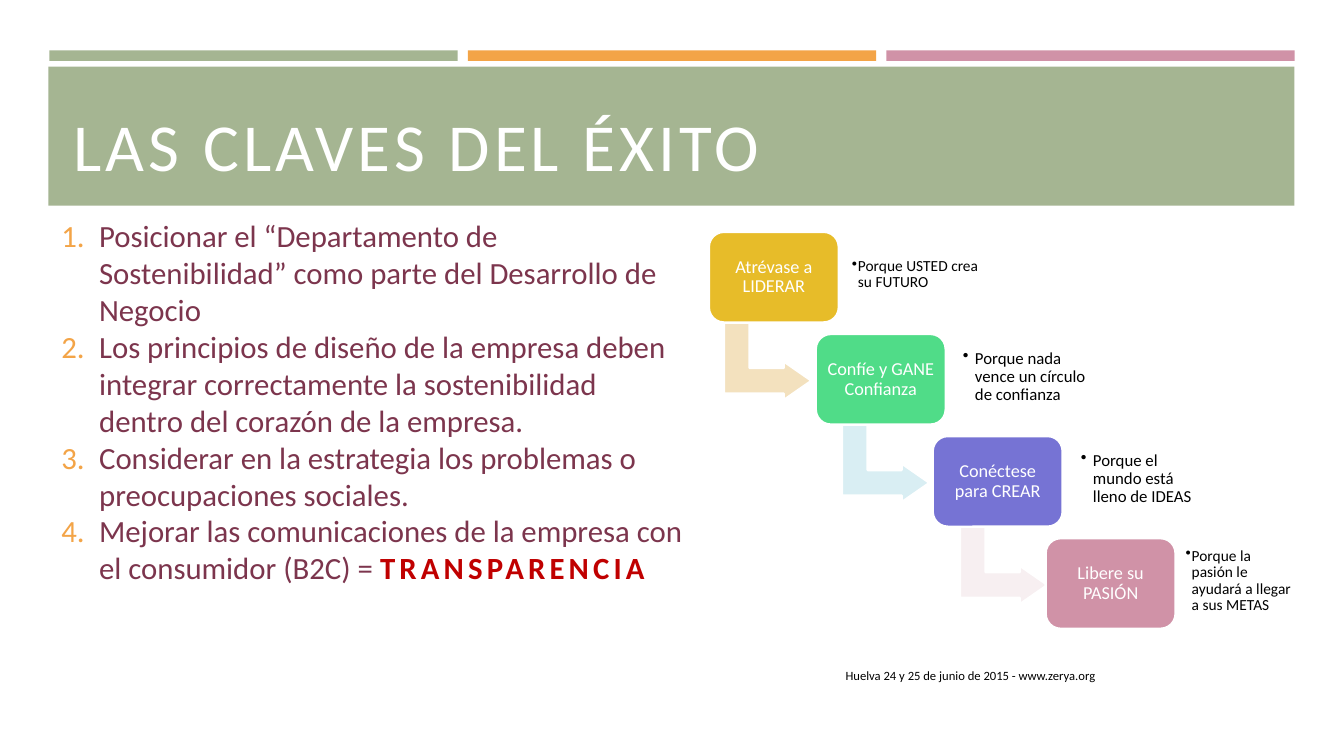
from lxml import etree
from pptx import Presentation, util as u
from pptx.dml.color import RGBColor
from pptx.enum import shapes, text
from pptx.oxml.ns import qn

THEME = {
    "font": "Calibri",
    "sage": "A5B592", "orange": "F3A447", "rose": "D092A7", "white": "FFFFFF",
    "black": "000000", "plum": "7C354D", "red": "C00000",
    "title": 48, "body": 22, "step": 13, "footer": 9,
}
CELL = u.Inches(0.1)  # the slide is a grid of 133.3 columns by 75 rows

presentation = Presentation()
presentation.slide_width, presentation.slide_height = round(133.3 * CELL), 75 * CELL
slide = presentation.slides.add_slide(presentation.slide_layouts[6])


def add_box(column, row, columns, rows, kind=None, fill=None, outlined=False):
    """Add a filled preset shape, or a wrapping text box when no kind is given."""
    frame = [round(cells * CELL) for cells in (column, row, columns, rows)]
    if kind is None:
        shape = slide.shapes.add_textbox(*frame)
    else:
        shape = slide.shapes.add_shape(kind, *frame)
        shape.shadow.inherit = False
        shape.fill.solid()
        shape.fill.fore_color.rgb = RGBColor.from_string(fill)
        if outlined:
            shape.line.color.rgb = RGBColor.from_string(THEME["white"])
            shape.line.width = u.Pt(1.75)
        else:
            shape.line.fill.background()
    shape.text_frame.word_wrap = True
    return shape


def add_run(paragraph, words, size, color, bold=False, spacing=0):
    run = paragraph.add_run()
    run.text = words
    values = {"name": THEME["font"], "size": u.Pt(size), "bold": bold}
    for name, value in values.items():
        setattr(run.font, name, value)
    run.font.color.rgb = RGBColor.from_string(color)
    if spacing:
        run.font._element.set("spc", str(spacing * 100))


# Header: three strips above a title band
RECTANGLE = shapes.MSO_SHAPE.RECTANGLE
for index, color in enumerate(("sage", "orange", "rose")):
    add_box(4.9 + 41.5 * index, 5, 40.5, 1.05, RECTANGLE, THEME[color])
add_box(4.8, 6.6, 123.6, 13.8, RECTANGLE, THEME["sage"])

title = add_box(6.3, 8, 120.6, 10.8).text_frame
title.vertical_anchor = text.MSO_ANCHOR.BOTTOM
add_run(title.paragraphs[0], "LAS CLAVES DEL ÉXITO", THEME["title"], THEME["white"], spacing=3)

footer = add_box(78.5, 65, 31.1, 4).text_frame
footer.vertical_anchor = text.MSO_ANCHOR.MIDDLE
footer.paragraphs[0].alignment = text.PP_ALIGN.RIGHT
add_run(footer.paragraphs[0], "Huelva 24 y 25 de junio de 2015 - www.zerya.org",
        THEME["footer"], THEME["black"])

# Numbered keys
keys = (
    "Posicionar el “Departamento de Sostenibilidad” como parte del Desarrollo de Negocio",
    "Los principios de diseño de la empresa deben integrar correctamente la sostenibilidad "
    "dentro del corazón de la empresa.",
    "Considerar en la estrategia los problemas o preocupaciones sociales.",
    "Mejorar las comunicaciones de la empresa con el consumidor (B2C) = ",
)
key_list = add_box(5.1, 21, 63.7, 41.7).text_frame
for index, key in enumerate(keys):
    paragraph = key_list.paragraphs[0] if index == 0 else key_list.add_paragraph()
    properties = paragraph._p.get_or_add_pPr()
    properties.set("marL", str(round(3.75 * CELL)))
    properties.set("indent", str(round(-3.75 * CELL)))
    bullet_color = etree.SubElement(properties, qn("a:buClr"))
    etree.SubElement(bullet_color, qn("a:srgbClr"), val=THEME["orange"])
    etree.SubElement(properties, qn("a:buFont"), typeface="+mj-lt")
    etree.SubElement(properties, qn("a:buAutoNum"), type="arabicPeriod")
    add_run(paragraph, key, THEME["body"], THEME["plum"])
add_run(paragraph, "TRANSPARENCIA", THEME["body"], THEME["red"], bold=True, spacing=3)

# Staircase: step (column, colour, label), note (column, width, size, indent, words),
# arrow to the next step (column, colour)
stairs = (
    ((70.3, "E7BC29", "Atrévase a LIDERAR"),
     (84, 13.6, 11, 0.6, "Porque USTED crea su FUTURO"), (72.3, "F3E1BE")),
    ((80.9, "50DC88", "Confíe y GANE Confianza"),
     (95, 14.5, 12, 1.2, "Porque nada vence un círculo de confianza"), (84, "D9EEF3")),
    ((92.5, "7673D4", "Conéctese para CREAR"),
     (106.7, 12.7, 12, 1.2, "Porque el mundo está lleno de IDEAS"), (95.7, "F7EFF1")),
    ((103.7, THEME["rose"], "Libere su PASIÓN"),
     (117.1, 11.8, 11, 0.6, "Porque la pasión le ayudará a llegar a sus METAS"), None),
)
for index, (step, note, arrow) in enumerate(stairs):
    row = 23 + 10.13 * index
    if arrow:
        column, color = arrow
        bend = add_box(column, row + 8.5, 7.7, 8.7, shapes.MSO_SHAPE.BENT_UP_ARROW, color, True)
        bend.rotation = 90
        for position, share in enumerate((0.33, 0.25, 0.36)):
            bend.adjustments[position] = share

    column, color, label = step
    card = add_box(column, row, 12.9, 9, shapes.MSO_SHAPE.ROUNDED_RECTANGLE, color, True)
    note_column, width, size, indent, words = note
    caption = add_box(note_column, row + 0.6, width, 7.3)
    for shape in (card, caption):
        for side in ("left", "top", "right", "bottom"):
            setattr(shape.text_frame, f"margin_{side}", CELL // 2)
        shape.text_frame.vertical_anchor = text.MSO_ANCHOR.MIDDLE
        shape.text_frame.paragraphs[0].line_spacing = 0.9

    paragraph = card.text_frame.paragraphs[0]
    paragraph.alignment = text.PP_ALIGN.CENTER
    add_run(paragraph, label, THEME["step"], THEME["white"])

    paragraph = caption.text_frame.paragraphs[0]
    properties = paragraph._p.get_or_add_pPr()
    properties.set("marL", str(round(indent * CELL)))
    properties.set("indent", str(round(-indent * CELL)))
    etree.SubElement(properties, qn("a:buChar"), char="•")
    add_run(paragraph, words, size, THEME["black"])

presentation.save("out.pptx")
